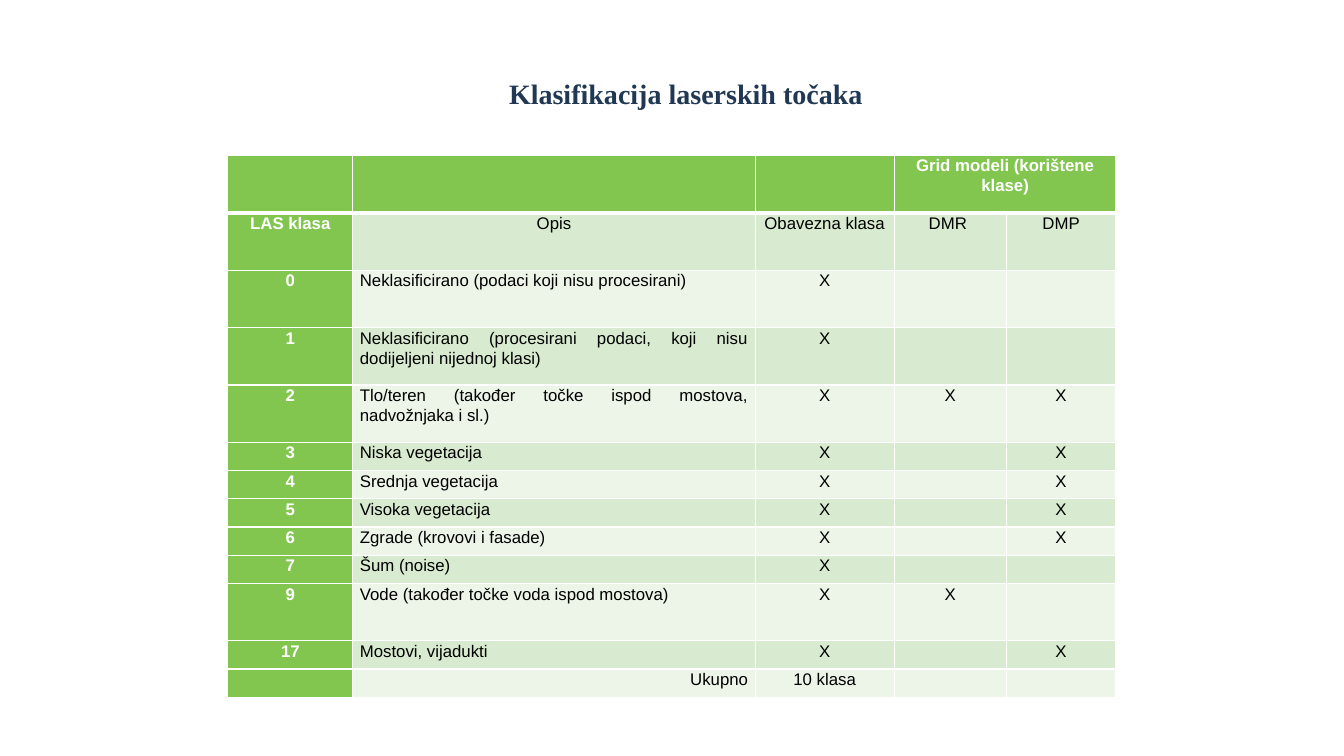
from lxml.etree import SubElement
from pptx import Presentation
from pptx.dml.color import RGBColor
from pptx.enum.text import MSO_ANCHOR, PP_ALIGN
from pptx.oxml.ns import qn
from pptx.util import Inches, Pt

COLORS = {
    "title": "213854",
    "green": "82C650",
    "dark_band": "D8EAD0",
    "light_band": "EDF5E9",
    "white": "FFFFFF",
    "black": "000000",
}
COLUMN_WIDTHS = [1.24, 3.99, 1.38, 1.11, 1.09]
TALL, SHORT = 0.57, 0.28
ROWS = [
    (TALL, ["", "", "", "Grid modeli (korištene klase)", ""]),
    (TALL, ["LAS klasa", "Opis", "Obavezna klasa", "DMR ", "DMP"]),
    (TALL, ["0", "Neklasificirano (podaci koji nisu procesirani)", "X", "", ""]),
    (TALL, ["1", "Neklasificirano (procesirani podaci, koji nisu dodijeljeni nijednoj klasi)", "X", "", ""]),
    (TALL, ["2", "Tlo/teren (također točke ispod mostova, nadvožnjaka i sl.)", "X", "X", "X"]),
    (SHORT, ["3", "Niska vegetacija", "X", "", "X"]),
    (SHORT, ["4", "Srednja vegetacija", "X", "", "X"]),
    (SHORT, ["5", "Visoka vegetacija ", "X", "", "X"]),
    (SHORT, ["6", "Zgrade (krovovi i fasade)", "X", "", "X"]),
    (SHORT, ["7", "Šum (noise)", "X", "", ""]),
    (TALL, ["9", "Vode (također točke voda ispod mostova)", "X", "X", ""]),
    (SHORT, ["17", "Mostovi, vijadukti", "X", "", "X"]),
    (SHORT, ["", "Ukupno", "10 klasa", "", ""]),
]


class SlideBuilder:
    def __init__(self, slide):
        self.slide = slide
        self.title_font = "Times New Roman"
        self.table_font = "Arial"
        self.table_size = 12

    def color(self, name):
        return RGBColor.from_string(COLORS[name])

    def set_font(self, paragraph, name, size, color, bold):
        font = paragraph.font
        font.name, font.size, font.bold = name, Pt(size), bold
        font.color.rgb = self.color(color)

    def title(self, text, left, top, width, height):
        shape = self.slide.shapes.add_textbox(Inches(left), Inches(top), Inches(width), Inches(height))
        shape.text_frame.word_wrap = False
        paragraph = shape.text_frame.paragraphs[0]
        paragraph.text = text
        self.set_font(paragraph, self.title_font, 20, "title", True)

    def borders(self, cell, row):
        properties = cell._tc.get_or_add_tcPr()
        # The rule below the header row is thicker
        widths = {"L": 1, "R": 1, "T": 3 if row == 1 else 1, "B": 3 if row == 0 else 1}
        for side, width in widths.items():
            line = SubElement(properties, qn(f"a:ln{side}"), w=str(Pt(width)))
            SubElement(SubElement(line, qn("a:solidFill")), qn("a:srgbClr"), val=COLORS["white"])

    def cell(self, cell, text, row, alignment, fill, emphasized):
        self.borders(cell, row)
        cell.fill.solid()
        cell.fill.fore_color.rgb = self.color(fill)
        cell.margin_left = cell.margin_right = Inches(0.07)
        cell.margin_top = cell.margin_bottom = 0
        cell.vertical_anchor = MSO_ANCHOR.TOP
        paragraph = cell.text_frame.paragraphs[0]
        paragraph.alignment = alignment
        paragraph.line_spacing = 1.07
        if text:
            paragraph.text = text
        else:
            # An empty cell keeps the small line height
            SubElement(paragraph._p, qn("a:endParaRPr"), sz=str(self.table_size * 100))
        self.set_font(paragraph, self.table_font, self.table_size,
                      "white" if emphasized else "black", emphasized)

    def table(self, rows, column_widths, left, top):
        height = sum(row_height for row_height, _ in rows)
        table = self.slide.shapes.add_table(
            len(rows), len(column_widths), Inches(left), Inches(top),
            Inches(sum(column_widths)), Inches(height)).table
        for column, width in zip(table.columns, column_widths):
            column.width = Inches(width)
        for row, (row_height, texts) in enumerate(rows):
            table.rows[row].height = Inches(row_height)
            band = "dark_band" if row % 2 else "light_band"
            for column, text in enumerate(texts):
                emphasized = row == 0 or column == 0
                alignment = PP_ALIGN.CENTER
                if column == 1 and row > 1:
                    alignment = PP_ALIGN.RIGHT if row == len(rows) - 1 else PP_ALIGN.JUSTIFY
                self.cell(table.cell(row, column), text, row, alignment,
                          "green" if emphasized else band, emphasized)
        return table


def main():
    presentation = Presentation()
    presentation.slide_width, presentation.slide_height = Inches(13.33), Inches(7.5)
    builder = SlideBuilder(presentation.slides.add_slide(presentation.slide_layouts[6]))

    # Class table, with one heading over both grid models
    table = builder.table(ROWS, COLUMN_WIDTHS, 2.26, 1.54)
    table.cell(0, 3).merge(table.cell(0, 4))

    # Title
    builder.title("Klasifikacija laserskih točaka", 4.95, 0.71, 3.71, 0.44)

    presentation.save("out.pptx")


if __name__ == "__main__":
    main()
